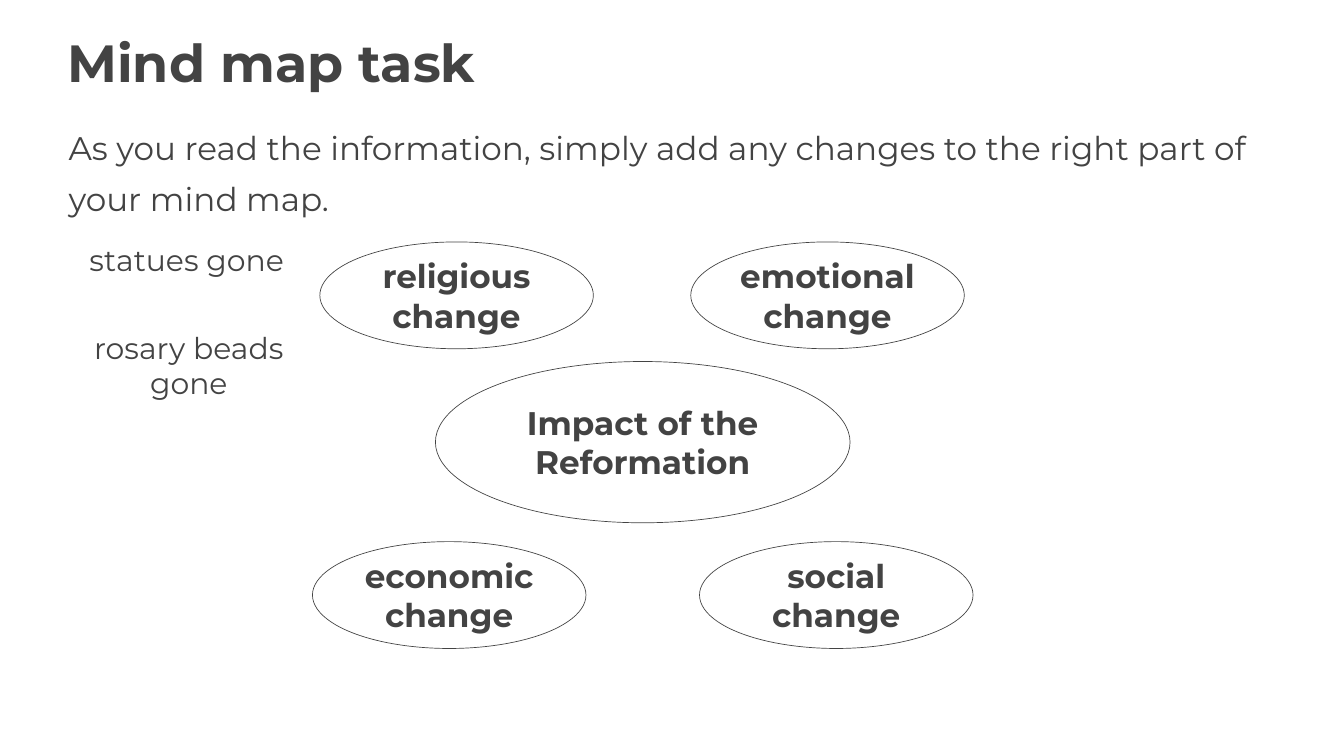
from pptx import Presentation
from pptx.dml.color import RGBColor
from pptx.enum.shapes import MSO_SHAPE as SHAPE
from pptx.enum.text import MSO_ANCHOR as ANCHOR, PP_ALIGN as ALIGN
from pptx.util import Inches, Pt

# Content
TITLE = "Mind map task"
TASK = ("As you read the information, simply add any changes "
        "to the right part of your mind map.")
CENTRE = ("Impact of the Reformation", 6.48, 5.38, 6.17, 2.4)
BRANCHES = [  # text, left, top
    ("religious change", 4.76, 3.6),
    ("emotional change", 10.28, 3.6),
    ("economic change", 4.65, 8.06),
    ("social change", 10.41, 8.06),
]
NOTES = [("statues gone", 1.11, 3.5), ("rosary beads gone", 1.14, 4.8)]

BRANCH_SIZE = (4.07, 1.59)
NOTE_SIZE = (3.34, 1.09)
FONT, INK, PAPER = "Montserrat", "434343", "FFFFFF"


def color(value):
    return RGBColor.from_string(value)


def write(sp, text, size=35, bold=False, align=ALIGN.LEFT, anchor=ANCHOR.TOP,
          inset=0.1, spacing=None, after=None):
    tf = sp.text_frame
    tf.word_wrap = True
    tf.vertical_anchor = anchor
    tf.margin_left = tf.margin_right = Inches(inset)
    tf.margin_top = tf.margin_bottom = Inches(inset)
    p = tf.paragraphs[0]
    p.alignment = align
    if spacing:
        p.line_spacing = spacing
    if after:
        p.space_after = Pt(after)
    r = p.add_run()
    r.text = text
    r.font.name, r.font.size, r.font.bold = FONT, Pt(size), bold
    r.font.color.rgb = color(INK)


def add_text(s, text, *box, **fmt):
    write(s.shapes.add_textbox(*map(Inches, box)), text, **fmt)


def add_bubble(s, text, *box):
    sp = s.shapes.add_shape(SHAPE.OVAL, *map(Inches, box))
    sp.shadow.inherit = False
    sp.fill.solid()
    sp.fill.fore_color.rgb = color(PAPER)
    sp.line.color.rgb = color(INK)
    sp.line.width = Pt(0.75)
    write(sp, text, bold=True, align=ALIGN.CENTER, anchor=ANCHOR.MIDDLE)


def main():
    prs = Presentation()
    prs.slide_width, prs.slide_height = Inches(20), Inches(11.25)
    s = prs.slides.add_slide(prs.slide_layouts[5])

    # Title and task
    title = s.shapes.title
    title.left, title.top = Inches(1), Inches(0.31)
    title.width, title.height = Inches(17.99), Inches(1.78)
    write(title, TITLE, size=56, bold=True, inset=0, spacing=1.15)
    add_text(s, TASK, 1.02, 1.73, 18.45, 6.91, inset=0, spacing=1.3, after=20)

    # Mind map
    add_bubble(s, *CENTRE)
    for branch in BRANCHES:
        add_bubble(s, *branch, *BRANCH_SIZE)

    # Example notes
    for note in NOTES:
        add_text(s, *note, *NOTE_SIZE, size=32, align=ALIGN.CENTER)

    prs.save("out.pptx")


if __name__ == "__main__":
    main()
